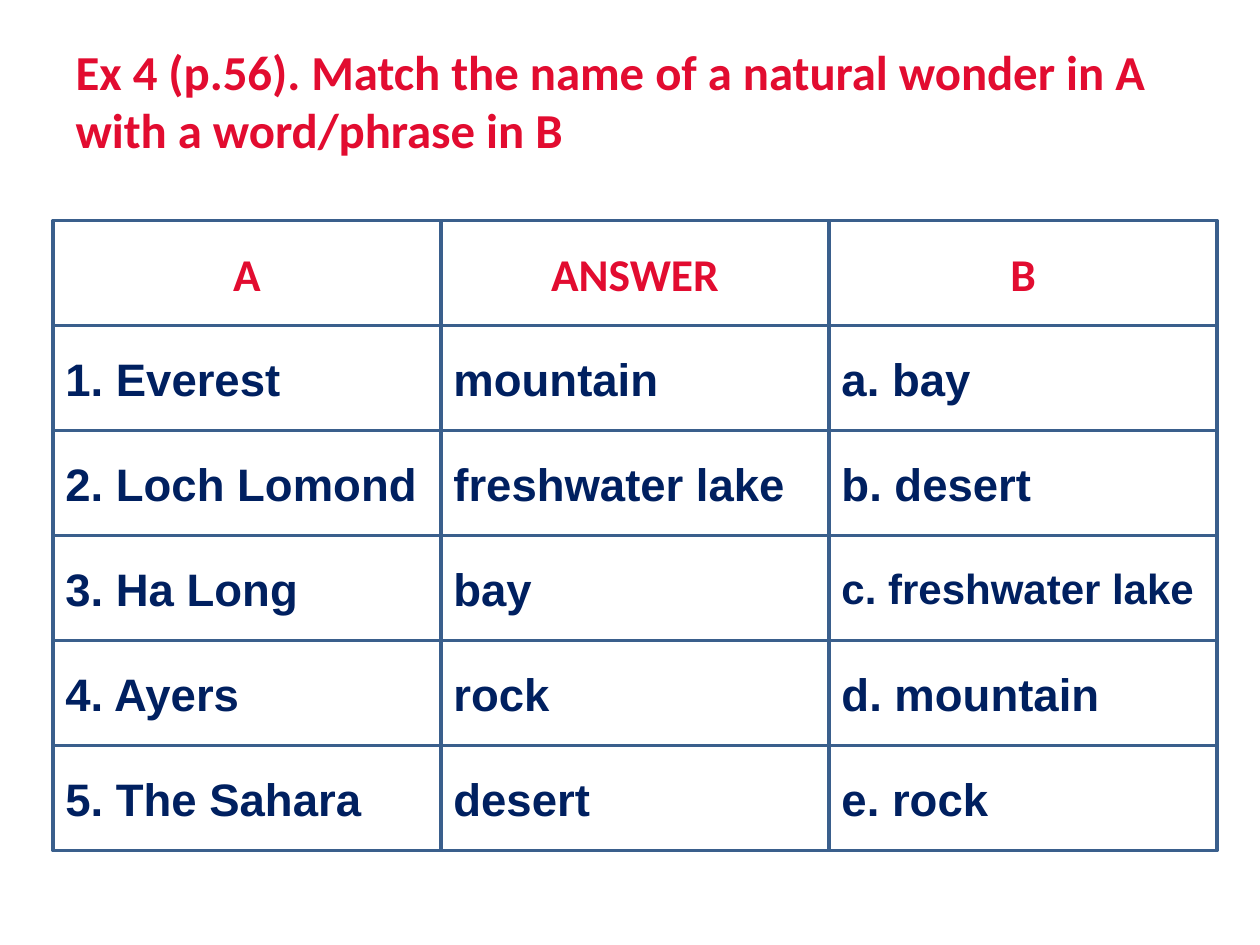
from pptx import Presentation
from pptx.dml.color import RGBColor
from pptx.enum.shapes import MSO_SHAPE
from pptx.enum.text import MSO_ANCHOR, MSO_AUTO_SIZE, PP_ALIGN
from pptx.util import Inches, Pt

TITLE = "Ex 4 (p.56). Match the name of a natural wonder in A with a word/phrase in B"
HEADERS = ("A", "ANSWER", "B")
ROWS = [
    ("1. Everest", "mountain", "a. bay"),
    ("2. Loch Lomond", "freshwater lake", "b. desert"),
    ("3. Ha Long", "bay", "c. freshwater lake"),
    ("4. Ayers", "rock", "d. mountain"),
    ("5. The Sahara", "desert", "e. rock"),
]
SMALLER = {"c. freshwater lake": 24}
RED, NAVY, BLUE, WHITE = "E20C30", "002060", "3A5F8C", "FFFFFF"
LEFT, TOP, COL_W, ROW_H = 0.42, 1.75, 3.08, 5 / 6


def rgb(value):
    return RGBColor.from_string(value)


def set_text(tf, text, size, font, color, align):
    tf.text = text
    tf.word_wrap = True
    tf.vertical_anchor = MSO_ANCHOR.MIDDLE
    p = tf.paragraphs[0]
    p.alignment = align
    r = p.runs[0]
    r.font.size = Pt(size)
    r.font.name = font
    r.font.bold = True
    r.font.color.rgb = rgb(color)


def add_title(s):
    title = s.shapes.title
    title.left, title.top = Inches(0.5), Inches(0.5)
    title.width, title.height = Inches(9), Inches(1.25)
    tf = title.text_frame
    set_text(tf, TITLE, 27.9, "Calibri", RED, PP_ALIGN.LEFT)
    tf.auto_size = MSO_AUTO_SIZE.NONE
    tf.margin_bottom = Inches(0.71)


def add_box(s, row, col, text, style):
    box = s.shapes.add_shape(
        MSO_SHAPE.RECTANGLE,
        Inches(LEFT + col * COL_W), Inches(TOP + row * ROW_H),
        Inches(COL_W), Inches(ROW_H),
    )
    box.shadow.inherit = False
    box.fill.solid()
    box.fill.fore_color.rgb = rgb(WHITE)
    box.line.color.rgb = rgb(BLUE)
    box.line.width = Pt(2)
    set_text(box.text_frame, text, SMALLER.get(text, 26), *style)


def main():
    """Build the matching exercise slide."""
    prs = Presentation()
    prs.slide_width, prs.slide_height = Inches(10), Inches(7.5)
    s = prs.slides.add_slide(prs.slide_layouts[5])
    add_title(s)
    header_style = ("Calibri", RED, PP_ALIGN.CENTER)
    body_style = ("Arial", NAVY, PP_ALIGN.LEFT)
    for row, texts in enumerate([HEADERS, *ROWS]):
        style = body_style if row else header_style
        for col, text in enumerate(texts):
            add_box(s, row, col, text, style)
    prs.save("out.pptx")


if __name__ == "__main__":
    main()
